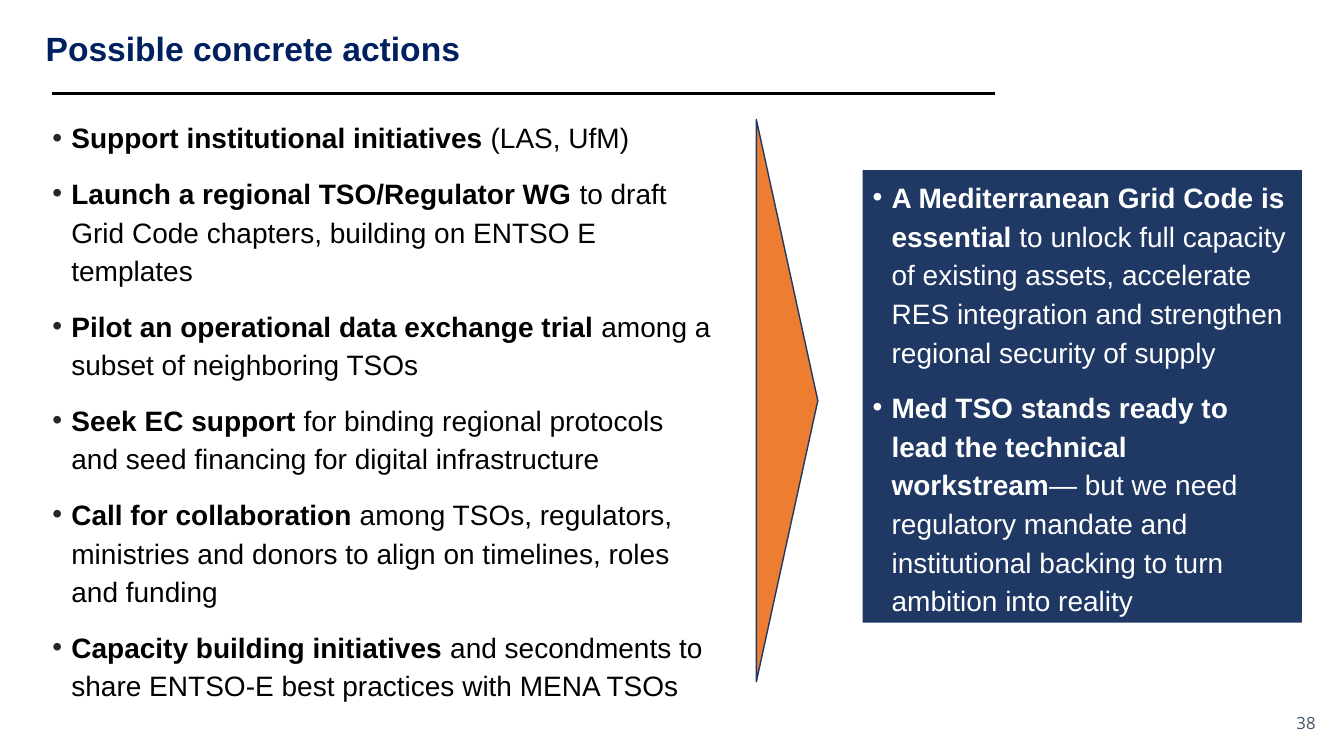
import pptx
import pptx.dml.color
import pptx.enum.shapes
import pptx.enum.text
import pptx.oxml.ns
import pptx.util
from lxml import etree

Cm = pptx.util.Cm
Pt = pptx.util.Pt
SHAPES = pptx.enum.shapes.MSO_SHAPE
ALIGN = pptx.enum.text.PP_ALIGN
ANCHOR = pptx.enum.text.MSO_ANCHOR

ACTIONS = [
    ("Support institutional initiatives ", "(LAS, UfM)"),
    ("Launch a regional TSO/Regulator WG ",
     "to draft Grid Code chapters, building on ENTSO E templates"),
    ("Pilot an operational data exchange trial ",
     "among a subset of neighboring TSOs"),
    ("Seek EC support ",
     "for binding regional protocols and seed financing for digital infrastructure"),
    ("Call for collaboration ",
     "among TSOs, regulators, ministries and donors to align on timelines, roles and funding"),
    ("Capacity building initiatives ",
     "and secondments to share ENTSO-E best practices with MENA TSOs"),
]
CONCLUSIONS = [
    ("A Mediterranean Grid Code is essential ",
     "to unlock full capacity of existing assets, accelerate RES integration "
     "and strengthen regional security of supply"),
    ("Med TSO stands ready to lead the technical workstream",
     "— but we need regulatory mandate and institutional backing "
     "to turn ambition into reality"),
]


def rgb(value):
    return pptx.dml.color.RGBColor.from_string(value)


def add_child(parent, tag, **attributes):
    return etree.SubElement(parent, pptx.oxml.ns.qn(tag), attributes)


def add_text(paragraph, text, size=20, color="000000", bold=False, font="Arial"):
    run = paragraph.add_run()
    run.text = text
    run.font.name = font
    run.font.size = Pt(size)
    run.font.bold = bold
    run.font.color.rgb = rgb(color)


class SlideBuilder:
    NAVY = "002060"
    PANEL = "203864"
    ORANGE = "ED7D31"
    GREY = "44546A"

    def __init__(self, slide):
        self.slide = slide

    def frame(self, shape, inset=0.0, side_inset=None, anchor=ANCHOR.TOP, wrap=True):
        frame = shape.text_frame
        frame.auto_size = pptx.enum.text.MSO_AUTO_SIZE.NONE
        frame.word_wrap = wrap
        frame.vertical_anchor = anchor
        frame.margin_top = frame.margin_bottom = Cm(inset)
        frame.margin_left = frame.margin_right = Cm(inset if side_inset is None else side_inset)
        return frame

    def title(self, text, left, top, width, height):
        shape = self.slide.shapes.title
        shape.left, shape.top, shape.width, shape.height = map(Cm, (left, top, width, height))
        paragraph = self.frame(shape, 0.08).paragraphs[0]
        paragraph.alignment = ALIGN.LEFT
        paragraph.line_spacing = 1.15
        paragraph.space_before = Pt(0)
        add_text(paragraph, text, size=24, color=self.NAVY, bold=True)

    def text_box(self, left, top, width, height):
        return self.slide.shapes.add_textbox(Cm(left), Cm(top), Cm(width), Cm(height))

    def rule(self, left, top, right):
        line = self.slide.shapes.add_connector(
            pptx.enum.shapes.MSO_CONNECTOR.STRAIGHT, Cm(left), Cm(top), Cm(right), Cm(top))
        line.line.color.rgb = rgb("000000")
        line.line.width = Pt(2)
        add_child(line._element.spPr, "a:effectLst")

    def block(self, kind, left, top, width, height, fill, outline=None):
        shape = self.slide.shapes.add_shape(kind, Cm(left), Cm(top), Cm(width), Cm(height))
        shape.shadow.inherit = False
        shape.fill.solid()
        shape.fill.fore_color.rgb = rgb(fill)
        if outline:
            shape.line.color.rgb = rgb(outline)
            shape.line.width = Pt(1)
        else:
            shape.line.fill.background()
        return shape

    def bullets(self, frame, items, color, bullet_color):
        for index, (lead, detail) in enumerate(items):
            paragraph = frame.paragraphs[0] if index == 0 else frame.add_paragraph()
            paragraph.alignment = ALIGN.LEFT
            paragraph.line_spacing = 1.15
            paragraph.space_before = Pt(6 if index else 0)
            paragraph.space_after = Pt(6)
            properties = paragraph._p.get_or_add_pPr()
            properties.set("marL", str(Cm(0.48)))
            properties.set("indent", str(-Cm(0.48)))
            add_child(add_child(properties, "a:buClr"), "a:srgbClr", val=bullet_color)
            add_child(properties, "a:buFont", typeface="Arial")
            add_child(properties, "a:buChar", char="•")
            add_text(paragraph, lead, color=color, bold=True)
            add_text(paragraph, detail, color=color)

    def page_number(self, number, left, top, size):
        frame = self.frame(self.text_box(left, top, size, size), 0.15,
                           anchor=ANCHOR.MIDDLE, wrap=False)
        frame.paragraphs[0].alignment = ALIGN.CENTER
        add_text(frame.paragraphs[0], number, size=12, color=self.GREY, font="Open Sans")


def main():
    presentation = pptx.Presentation()
    presentation.slide_width = Cm(33.87)
    presentation.slide_height = Cm(19.05)
    builder = SlideBuilder(presentation.slides.add_slide(presentation.slide_layouts[5]))

    # Heading and page number
    builder.title("Possible concrete actions", 1.07, 0.48, 24.61, 1.75)
    builder.rule(1.32, 2.36, 25.07)
    builder.page_number("38", 32.33, 17.63, 1.17)

    # Actions on the left
    actions = builder.frame(builder.text_box(1.32, 2.92, 16.64, 15.37))
    builder.bullets(actions, ACTIONS, "000000", "262626")

    # Conclusions on the right
    panel = builder.block(SHAPES.RECTANGLE, 21.92, 4.33, 11.15, 11.5, builder.PANEL)
    panel.left, panel.top, panel.width, panel.height = map(Cm, (21.74, 4.29, 11.07, 11.4))
    conclusions = builder.frame(panel, 0.13, side_inset=0.25)
    builder.bullets(conclusions, CONCLUSIONS, "FFFFFF", "FFFFFF")

    # Triangle pointing from actions to conclusions
    pointer = builder.block(SHAPES.ISOSCELES_TRIANGLE, 12.75, 9.32, 14.17, 1.55,
                            builder.ORANGE, outline=builder.PANEL)
    pointer.rotation = 90

    presentation.save("out.pptx")


if __name__ == "__main__":
    main()
